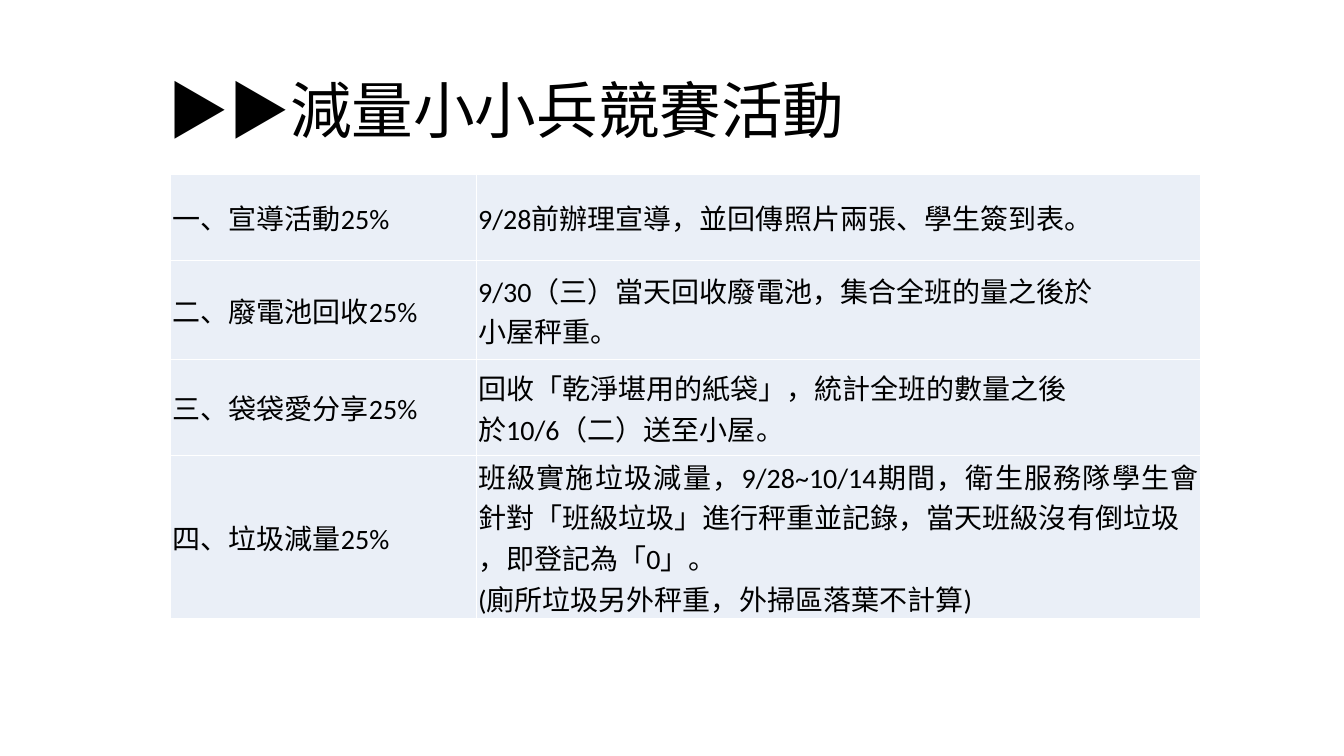
"""Builds the waste reduction contest slide: a title above a table of four activities."""
from lxml import etree
from pptx import Presentation
from pptx.dml.color import RGBColor
from pptx.enum.text import MSO_ANCHOR, PP_ALIGN
from pptx.oxml.ns import qn
from pptx.util import Cm, Pt

MIDDLE = MSO_ANCHOR.MIDDLE
LEFT, JUSTIFY = PP_ALIGN.LEFT, PP_ALIGN.JUSTIFY

THEME = {
    "latin": "Calibri",
    "cjk": "Noto Sans CJK TC",
    "text": "000000",
    "cell": "EAEFF7",
    "border": "FFFFFF",
    "title_size": 44,
    "cell_size": 20,
    "border_width": 1,
}

TITLE = "▶▶減量小小兵競賽活動"
ACTIVITIES = [
    ("一、宣導活動25%", [["9/28前辦理宣導，並回傳照片兩張、學生簽到表。"]]),
    ("二、廢電池回收25%", [
        ["9/30", "（三）", "當天回收廢電池，集合全班的量之後於"],
        ["小屋秤重。"],
    ]),
    ("三、袋袋愛分享25%", [
        ["回收「乾淨堪用的紙袋」，統計全班的數量之後"],
        ["於10/6", "（二）", "送至小屋。"],
    ]),
    ("四、垃圾減量25%", [
        ["班級實施垃圾減量，9/28~10/14期間，衛生服務隊學生會"
         "針對「班級垃圾」進行秤重並記錄，當天班級沒有倒垃圾"],
        ["，即登記為「0」。"],
        ["(廁所垃圾另外秤重，外掃區落葉不計算)"],
    ]),
]

TITLE_BOX = (3.96, 1.02, 27.58, 3.68)
TABLE_AT = (4.3, 4.4)
COLUMN_WIDTHS = (7.7, 18.26)
ROW_HEIGHTS = (2.16, 2.51, 2.41, 3.61)
CELL_INSET = 0.05


def add_run(p, text, size):
    r = p.add_run()
    r.text = text
    r.font.size = Pt(size)
    r.font.name = THEME["cjk"] if text.startswith("（") else THEME["latin"]
    r.font.color.rgb = RGBColor.from_string(THEME["text"])
    ea = etree.SubElement(r.font._element, qn("a:ea"))
    ea.set("typeface", THEME["cjk"])


def write(tf, paragraphs, size, align):
    for i, runs in enumerate(paragraphs):
        p = tf.add_paragraph() if i else tf.paragraphs[0]
        p.alignment = align
        for text in runs:
            add_run(p, text, size)


def add_borders(cell):
    tc_pr = cell._tc.get_or_add_tcPr()
    for i, side in enumerate(("lnL", "lnR", "lnT", "lnB")):
        ln = etree.Element(qn(f"a:{side}"), w=str(Pt(THEME["border_width"])))
        fill = etree.SubElement(ln, qn("a:solidFill"))
        etree.SubElement(fill, qn("a:srgbClr"), val=THEME["border"])
        tc_pr.insert(i, ln)


def fill_cell(cell, paragraphs, align):
    cell.vertical_anchor = MIDDLE
    cell.margin_left = cell.margin_right = Cm(CELL_INSET)
    cell.margin_top = cell.margin_bottom = 0
    cell.fill.solid()
    cell.fill.fore_color.rgb = RGBColor.from_string(THEME["cell"])
    add_borders(cell)
    write(cell.text_frame, paragraphs, THEME["cell_size"], align)


def add_title(s):
    tf = s.shapes.add_textbox(*map(Cm, TITLE_BOX)).text_frame
    tf.word_wrap = True
    tf.vertical_anchor = MIDDLE
    write(tf, [[TITLE]], THEME["title_size"], LEFT)
    tf.paragraphs[0].line_spacing = 0.9


def add_activities(s):
    size = (sum(COLUMN_WIDTHS), sum(ROW_HEIGHTS))
    table = s.shapes.add_table(
        len(ACTIVITIES), len(COLUMN_WIDTHS), *map(Cm, TABLE_AT + size)).table
    table.first_row = table.horz_banding = False
    for column, width in zip(table.columns, COLUMN_WIDTHS):
        column.width = Cm(width)
    for row, height, (name, details) in zip(table.rows, ROW_HEIGHTS, ACTIVITIES):
        row.height = Cm(height)
        fill_cell(row.cells[0], [[name]], LEFT)
        fill_cell(row.cells[1], details, JUSTIFY)


def main():
    prs = Presentation()
    prs.slide_width, prs.slide_height = Cm(33.87), Cm(19.05)
    s = prs.slides.add_slide(prs.slide_layouts[6])
    add_activities(s)
    add_title(s)
    prs.save("out.pptx")


if __name__ == "__main__":
    main()
